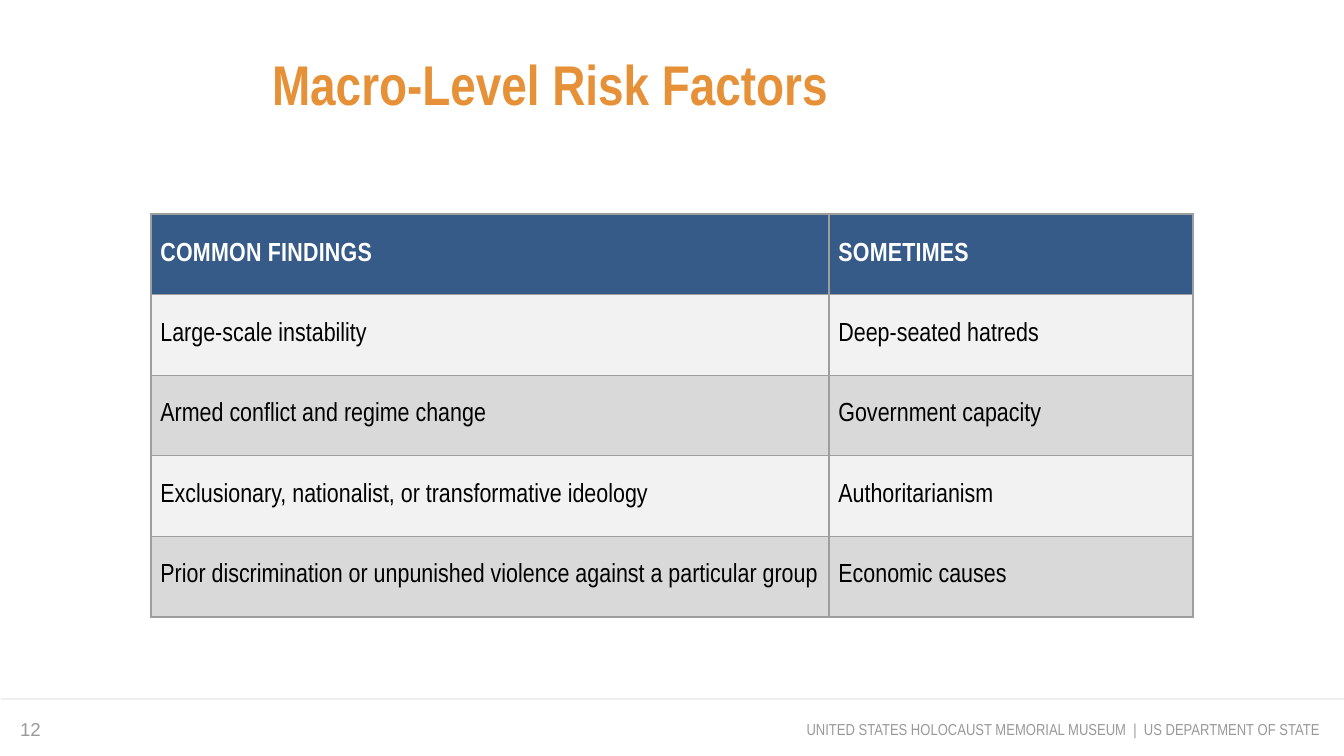
from lxml import etree
from pptx import Presentation
from pptx import util as u
from pptx.dml.color import RGBColor
from pptx.enum import shapes, text
from pptx.oxml.ns import qn

PX = 914400 / 134.4  # EMU per px

ORANGE = RGBColor(0xE6, 0x91, 0x38)
BLUE = RGBColor(0x37, 0x5B, 0x89)
WHITE = RGBColor(0xFF, 0xFF, 0xFF)
BLACK = RGBColor(0x00, 0x00, 0x00)
LIGHT = RGBColor(0xF2, 0xF2, 0xF2)
GRAY = RGBColor(0xD9, 0xD9, 0xD9)
BORDER = RGBColor(0x9E, 0x9E, 0x9E)
RULE = RGBColor(0xEF, 0xEF, 0xEF)
MUTED = RGBColor(0x99, 0x99, 0x99)
NARROW = "Arial Narrow"


def px(*lengths):
    return [u.Emu(round(length * PX)) for length in lengths]


def style(para, name, size, color, bold=False):
    para.font.name = name
    para.font.size = u.Pt(size)
    para.font.color.rgb = color
    para.font.bold = bold


deck = Presentation()
deck.slide_width, deck.slide_height = px(1344, 756)
page = deck.slides.add_slide(deck.slide_layouts[5])

# Title, indented from the left
title = page.shapes.title
title.left, title.top, title.width, title.height = px(83, 47, 1176, 73)
frame = title.text_frame
frame.text = "Macro-Level Risk Factors"
frame.auto_size = text.MSO_AUTO_SIZE.NONE
frame.margin_left = frame.margin_right = frame.margin_top = frame.margin_bottom = 0
para = frame.paragraphs[0]
para.alignment = text.PP_ALIGN.LEFT
para._p.get_or_add_pPr().set("marL", str(px(189)[0]))
style(para, NARROW, 30, ORANGE, bold=True)

# Footer rule
rule = page.shapes.add_connector(shapes.MSO_CONNECTOR.STRAIGHT, *px(1, 699, 1344, 699))
rule.line.color.rgb = RULE
rule.line.width = u.Pt(1.5)
etree.SubElement(rule._element.spPr, qn("a:effectLst"))

# Footer text and page number
footers = [
    ((696, 700, 637, 58), "UNITED STATES HOLOCAUST MEMORIAL MUSEUM  |  US DEPARTMENT OF STATE",
     NARROW, 8.5, text.PP_ALIGN.RIGHT, text.MSO_ANCHOR.MIDDLE),
    ((7, 694, 105, 58), "12", "Arial", 10, text.PP_ALIGN.LEFT, text.MSO_ANCHOR.BOTTOM),
]
for place, words, font, size, align, anchor in footers:
    frame = page.shapes.add_textbox(*px(*place)).text_frame
    frame.word_wrap = True
    frame.vertical_anchor = anchor
    frame.margin_left = frame.margin_right = u.Inches(0.1)
    frame.margin_top = frame.margin_bottom = u.Inches(0.1)
    frame.text = words
    frame.paragraphs[0].alignment = align
    style(frame.paragraphs[0], font, size, MUTED)

# Table of risk factors
rows = [
    ("COMMON FINDINGS", "SOMETIMES"),
    ("Large-scale instability", "Deep-seated hatreds"),
    ("Armed conflict and regime change", "Government capacity"),
    ("Exclusionary, nationalist, or transformative ideology", "Authoritarianism"),
    ("Prior discrimination or unpunished violence against a particular group",
     "Economic causes"),
]
table = page.shapes.add_table(len(rows), 2, *px(151, 214, 1042, 403)).table
for column, width in zip(table.columns, px(678, 364)):
    column.width = width

for r, row in enumerate(rows):
    header = r == 0
    for c, words in enumerate(row):
        cell = table.cell(r, c)
        cell.text = words
        cell.vertical_anchor = text.MSO_ANCHOR.MIDDLE
        cell.margin_left = cell.margin_right = u.Inches(0.07)
        cell.margin_top = cell.margin_bottom = u.Inches(0.06)
        para = cell.text_frame.paragraphs[0]
        style(para, NARROW, 14, WHITE if header else BLACK, bold=header)
        if header:
            para.runs[0].font._element.set("spc", "10")
        else:
            para.line_spacing = 0.85
            para.space_after = u.Pt(6)

        # Borders come before the fill in the cell properties
        props = cell._tc.get_or_add_tcPr()
        for side in ("lnL", "lnR", "lnT", "lnB"):
            line = etree.SubElement(props, qn(f"a:{side}"), w=str(u.Pt(0.75)))
            fill = etree.SubElement(line, qn("a:solidFill"))
            etree.SubElement(fill, qn("a:srgbClr"), val=str(BORDER))
        cell.fill.solid()
        cell.fill.fore_color.rgb = BLUE if header else (LIGHT if r % 2 else GRAY)

deck.save("out.pptx")
